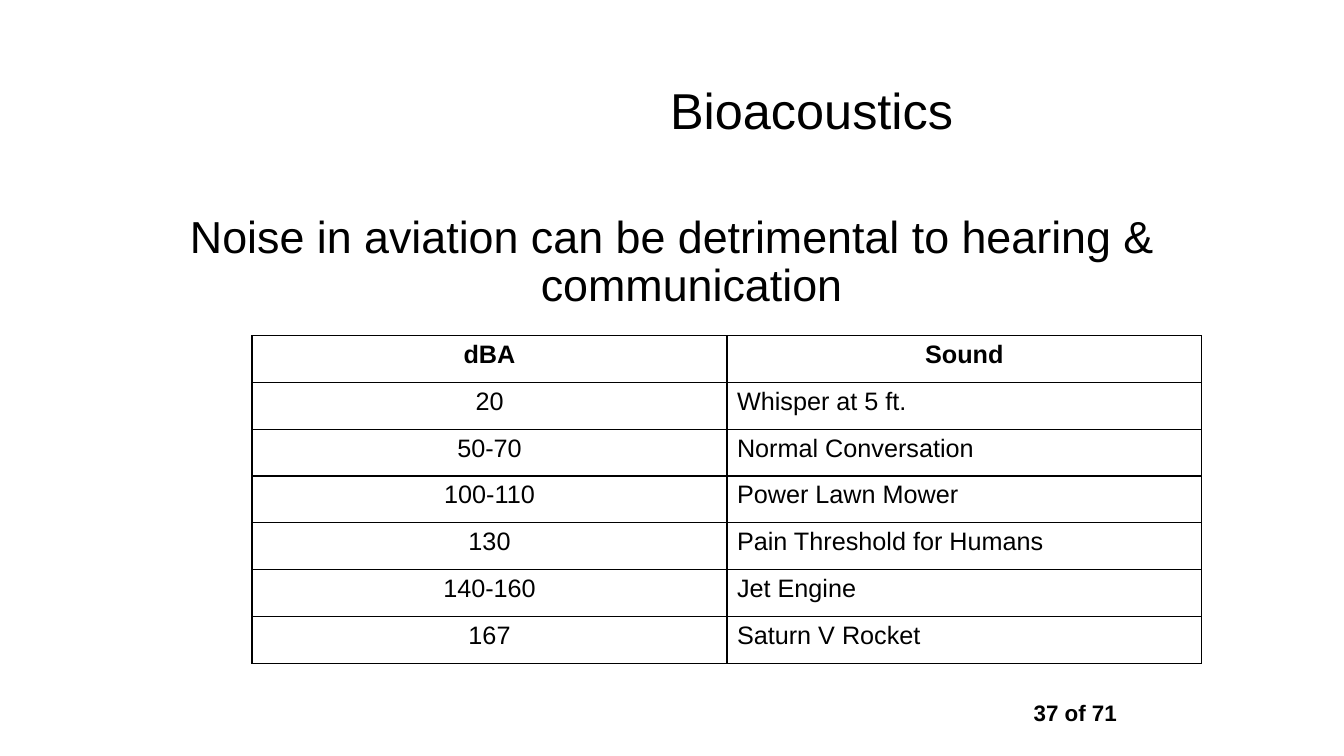
from lxml.etree import SubElement
from pptx import Presentation
from pptx.dml.color import RGBColor
from pptx.enum.text import MSO_ANCHOR, PP_ALIGN
from pptx.oxml.ns import qn
from pptx.util import Inches, Pt

THEME = {
    "font": "Arial",
    "ink": RGBColor(0, 0, 0),
    "border": "000000",
    "title": Pt(36),
    "message": Pt(32),
    "table": Pt(18),
    "page": Pt(16),
}


def write(frame, text, size, bold=False, align=PP_ALIGN.CENTER):
    paragraph = frame.paragraphs[0]
    paragraph.alignment = align
    run = paragraph.add_run()
    run.text = text
    font_format = {"name": THEME["font"], "size": THEME[size], "bold": bold}
    for attribute, value in font_format.items():
        setattr(run.font, attribute, value)
    run.font.color.rgb = THEME["ink"]
    return paragraph


def add_border(cell, side):
    line = SubElement(cell._tc.get_or_add_tcPr(), qn(f"a:ln{side}"), w=str(Pt(1)))
    fill = SubElement(line, qn("a:solidFill"))
    SubElement(fill, qn("a:srgbClr"), val=THEME["border"])


presentation = Presentation()
presentation.slide_width = Inches(13.33)
presentation.slide_height = Inches(7.5)
slide = presentation.slides.add_slide(presentation.slide_layouts[6])

# Title, message and page number: text, box, size, bold, anchor, hanging indent
texts = [
    ("Bioacoustics", (3.44, 0.42, 9.22, 1.33), "title", False, MSO_ANCHOR.MIDDLE, False),
    ("Noise in aviation can be detrimental to hearing & communication",
     (0.67, 2.08, 12, 1.08), "message", False, MSO_ANCHOR.TOP, True),
    ("37 of 71", (10.08, 6.92, 1.17, 0.34), "page", True, MSO_ANCHOR.TOP, True),
]
for text, box, size, bold, anchor, hanging in texts:
    frame = slide.shapes.add_textbox(*map(Inches, box)).text_frame
    frame.word_wrap = True
    frame.vertical_anchor = anchor
    paragraph = write(frame, text, size, bold)
    if hanging:
        paragraph.line_spacing = 0.9
        properties = paragraph._p.get_or_add_pPr()
        properties.set("marL", str(Inches(0.38)))
        properties.set("indent", str(Inches(-0.38)))

# Sound levels
sound_levels = [
    ("dBA", "Sound"),
    ("20", "Whisper at 5 ft."),
    ("50-70", "Normal Conversation"),
    ("100-110", "Power Lawn Mower"),
    ("130", "Pain Threshold for Humans"),
    ("140-160", "Jet Engine"),
    ("167", "Saturn V Rocket"),
]
levels_table = slide.shapes.add_table(
    len(sound_levels), 2, Inches(2.5), Inches(3.33), Inches(9.42), Inches(3.25)
).table
levels_table.first_row = False
levels_table.horz_banding = False

for row, values in enumerate(sound_levels):
    for column, value in enumerate(values):
        cell = levels_table.cell(row, column)
        header = row == 0
        centred = header or column == 0
        write(cell.text_frame, value, "table", header,
              PP_ALIGN.CENTER if centred else PP_ALIGN.LEFT)
        for side in "LRTB":
            add_border(cell, side)
        cell.fill.background()

presentation.save("out.pptx")
